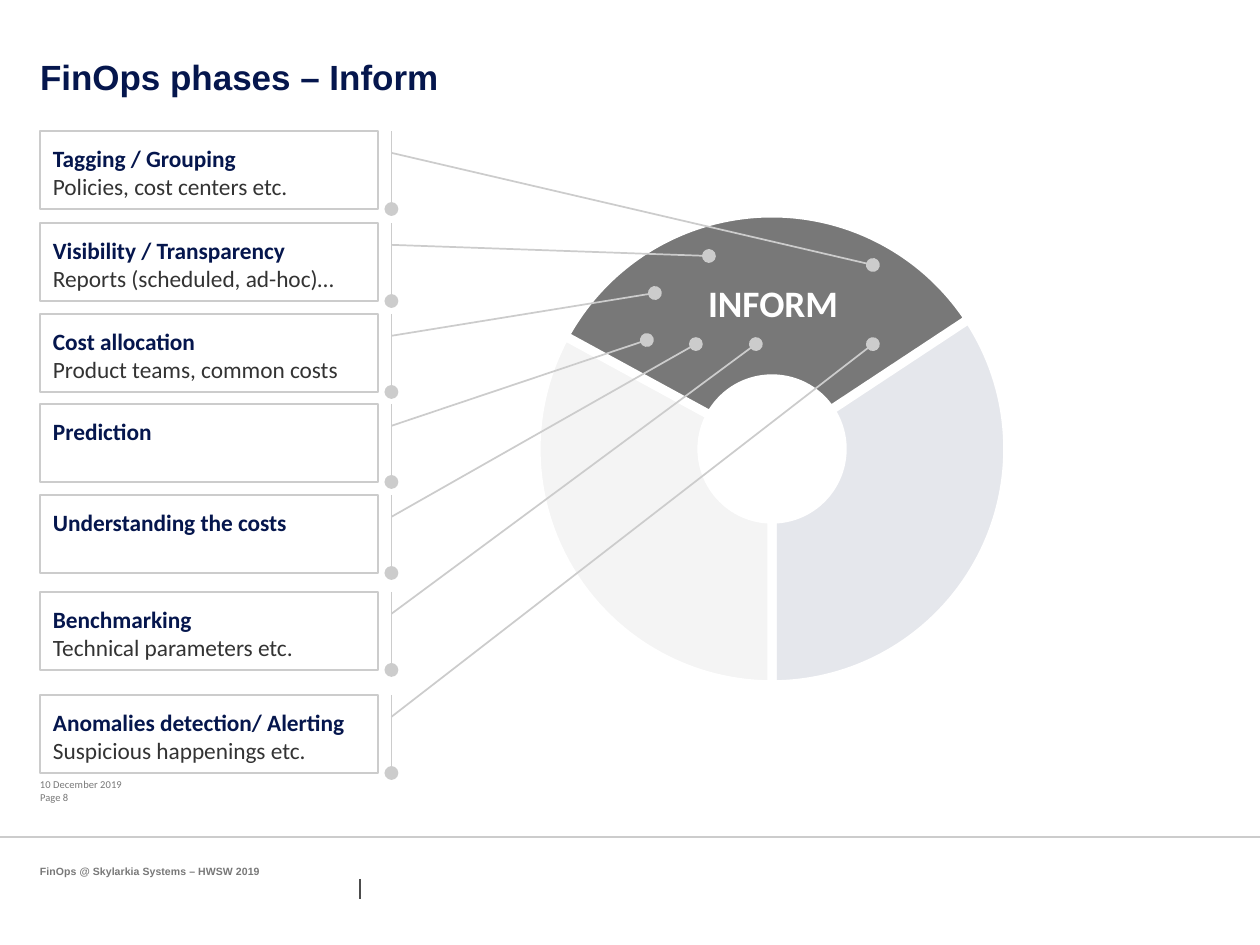
import pptx
import pptx.dml.color
import pptx.enum.shapes
import pptx.enum.text
import pptx.oxml
import pptx.oxml.ns
import pptx.util

SHAPES = pptx.enum.shapes.MSO_SHAPE
ANCHOR = pptx.enum.text.MSO_ANCHOR
ALIGN = pptx.enum.text.PP_ALIGN
COLOURS = {
    "navy": "05164D", "grey": "787878", "pale": "999999", "white": "FFFFFF",
    "rule": "CCCCCC", "tick": "4D4D4D", "body": "333333",
}
TOPICS = [
    (131, "Tagging / Grouping", "Policies, cost centers etc.", (873, 265)),
    (223, "Visibility / Transparency", "Reports (scheduled, ad-hoc)…", (709, 256)),
    (314, "Cost allocation", "Product teams, common costs", (655, 293)),
    (404, "Prediction", "", (647, 340)),
    (495, "Understanding the costs", "", (696, 344)),
    (592, "Benchmarking", "Technical parameters etc.", (756, 344)),
    (695, "Anomalies detection/ Alerting", "Suspicious happenings etc.", (873, 344)),
]
PHASES = [("navy", 299, 90, 10), ("grey", 208, 326.6, 100), ("pale", 90, 208.6, 10)]


def px(length):
    """Turn pixels into EMU."""
    return pptx.util.Emu(round(length * 914400 / 168))


def colour(name):
    """Look up a colour by name."""
    return pptx.dml.color.RGBColor.from_string(COLOURS[name])


def element(tag, **attributes):
    """Make a drawing element with attributes."""
    node = pptx.oxml.parse_xml(f"<a:{tag} {pptx.oxml.ns.nsdecls('a')}/>")
    for name, value in attributes.items():
        node.set(name, value)
    return node


def set_line(line, name, points):
    """Colour a line and set its width."""
    line.color.rgb = colour(name)
    line.width = pptx.util.Pt(points)


def set_frame(frame, inset=(0, 0), anchor=ANCHOR.TOP):
    """Set wrapping, insets and anchor of a text frame."""
    frame.word_wrap = True
    frame.auto_size = pptx.enum.text.MSO_AUTO_SIZE.NONE
    frame.margin_left = frame.margin_right = px(inset[0])
    frame.margin_top = frame.margin_bottom = px(inset[1])
    frame.vertical_anchor = anchor


def add_run(para, text, size, name, bold=False, font="Calibri", align=ALIGN.LEFT):
    """Add one formatted run to a paragraph."""
    para.alignment = align
    span = para.add_run()
    span.text = text
    span.font.size = pptx.util.Pt(size)
    span.font.name = font
    span.font.bold = bold
    span.font.color.rgb = colour(name)


def add_shape(page, kind, box):
    """Add a preset shape without shadow."""
    shape = page.shapes.add_shape(kind, *map(px, box))
    shape.shadow.inherit = False
    return shape


def add_rule(page, start, end, name):
    """Add a thin straight line."""
    rule = page.shapes.add_connector(
        pptx.enum.shapes.MSO_CONNECTOR.STRAIGHT, *map(px, start + end))
    set_line(rule.line, name, 0.5)
    rule._element.spPr.append(element("effectLst"))


def add_title(page, box):
    """Place and format the title."""
    title = page.shapes.title
    title.left, title.top, title.width, title.height = map(px, box)
    set_frame(title.text_frame)
    add_run(title.text_frame.paragraphs[0], "FinOps phases – Inform", 15, "navy", True, "Arial")


def add_wheel(page, box):
    """Draw the three phases, the hub and the label of the active phase."""
    left, top, size, _ = box
    for name, start, end, opacity in PHASES:
        phase = add_shape(page, SHAPES.PIE, box)
        phase.adjustments[0] = start * 0.6
        phase.adjustments[1] = end * 0.6
        phase.fill.solid()
        phase.fill.fore_color.rgb = colour(name)
        set_line(phase.line, "white", 4)
        if opacity < 100:
            fill = phase._element.spPr.find(pptx.oxml.ns.qn("a:solidFill"))
            fill[0].append(element("alpha", val=str(opacity * 1000)))
    hub_size = 140
    gap = (size - hub_size) / 2
    hub = add_shape(page, SHAPES.OVAL, (left + gap, top + gap, hub_size, hub_size))
    hub.fill.solid()
    hub.fill.fore_color.rgb = colour("white")
    set_line(hub.line, "white", 4)
    label = page.shapes.add_textbox(*map(px, (left + 149, top + 59, 176, 62)))
    set_frame(label.text_frame, (16, 8))
    add_run(label.text_frame.paragraphs[0], "INFORM", 16, "white", True, align=ALIGN.CENTER)


def add_topic(page, box, heading, detail, target):
    """Draw one topic with its callout line to the target point."""
    left, top, width, height = box
    topic = add_shape(page, SHAPES.LINE_CALLOUT_1_BORDER_AND_ACCENT_BAR, box)
    points = (0.28, 1.04, (target[1] - top) / height, (target[0] - left) / width)
    for index, value in enumerate(points):
        topic.adjustments[index] = value
    topic.fill.background()
    set_line(topic.line, "rule", 0.75)
    topic.line._get_or_add_ln().append(element("tailEnd", type="oval"))
    frame = topic.text_frame
    set_frame(frame, (13, 13))
    add_run(frame.paragraphs[0], heading, 10, "navy", True)
    if detail:
        add_run(frame.add_paragraph(), detail, 10, "body")


def add_footer(page, box):
    """Draw the footer rules and the small print."""
    left, top, width, _ = box
    add_rule(page, (left, top), (left + width, top), "rule")
    add_rule(page, (left + 360, top + 42), (left + 360, top + 62), "tick")
    notes = [
        (-59, 89, "10 December 2019", False, "Calibri"),
        (-46, 37, "Page 8", False, "Calibri"),
        (28, 297, "FinOps @ Skylarkia Systems – HWSW 2019", True, "Arial"),
    ]
    for offset, length, text, bold, font in notes:
        note = page.shapes.add_textbox(*map(px, (left + 40, top + offset, length, 13)))
        set_frame(note.text_frame, anchor=ANCHOR.MIDDLE)
        add_run(note.text_frame.paragraphs[0], text, 4.5, "grey", bold, font)


def main():
    """Build and save the deck."""
    deck = pptx.Presentation()
    deck.slide_width, deck.slide_height = px(1260), px(945)
    page = deck.slides.add_slide(deck.slide_layouts[5])
    add_title(page, (40, 55, 1171, 106))
    add_footer(page, (0, 837, 1260, 108))
    add_wheel(page, (536, 213, 472, 472))
    for top, heading, detail, target in TOPICS:
        add_topic(page, (40, top, 338, 78), heading, detail, target)
    deck.save("out.pptx")


if __name__ == "__main__":
    main()
